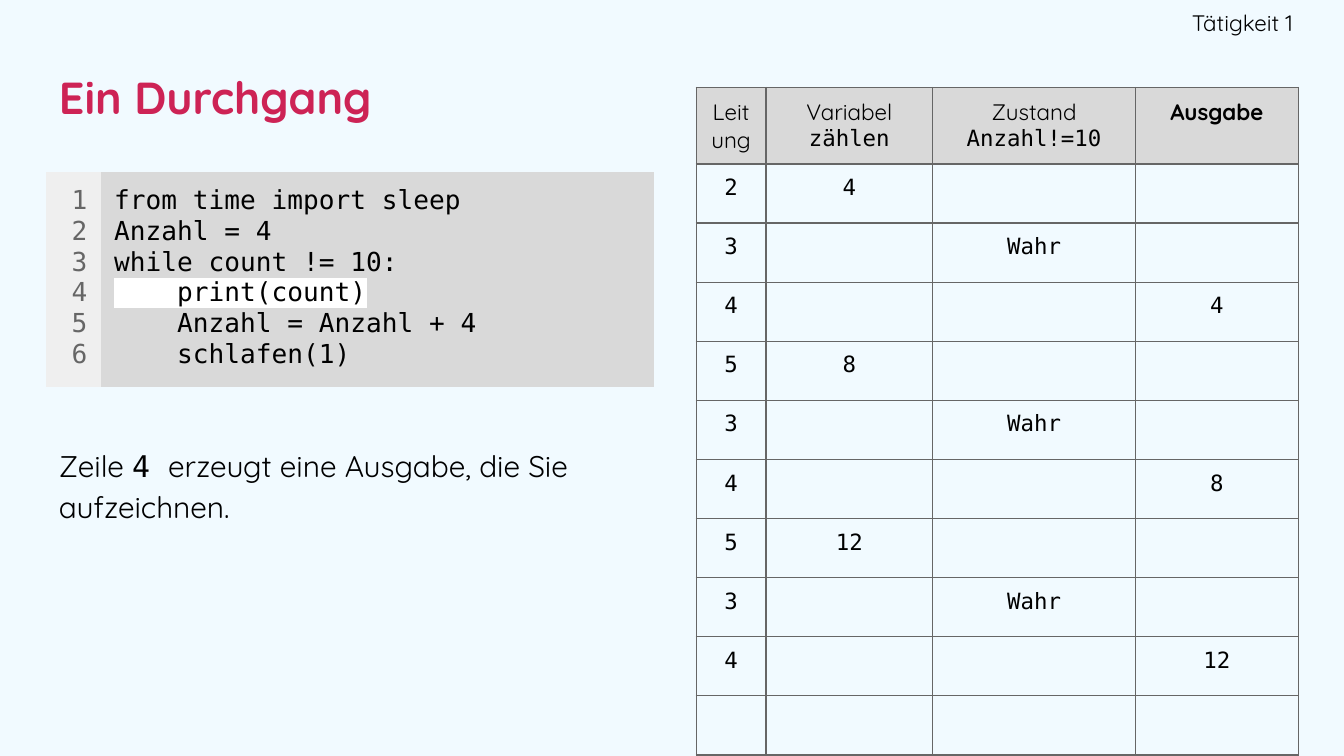
from dataclasses import dataclass
from lxml.etree import SubElement as Sub
from pptx import Presentation
from pptx.dml.color import RGBColor as Rgb
from pptx.enum.text import MSO_ANCHOR as Anchor, PP_ALIGN as Align
from pptx.oxml.ns import qn
from pptx.util import Inches, Pt

HUES = {
    "back": "F1FAFF", "title": "CD2355", "text": "000000", "count": "666666",
    "gutter": "EFEFEF", "code": "D9D9D9", "mark": "FFFFFF", "line": "666666",
}
SANS, MONO = "Quicksand", "DejaVu Sans Mono"
PLAIN = "{2D5ABB26-0587-4C30-8999-92F81FD0307C}"


@dataclass
class Span:
    text: str
    size: int = 12
    font: str = SANS
    hue: str = "text"
    bold: bool = False
    mark: bool = False


@dataclass
class Box:
    left: float
    top: float
    width: float
    height: float
    spans: list[Span]
    anchor: Anchor = Anchor.MIDDLE
    align: Align = Align.LEFT
    right: float = 0.1
    line: float = 1.0
    after: int = 0


def color(key: str) -> Rgb:
    """Return the named colour."""
    return Rgb.from_string(HUES[key])


def tint(parent, tag: str, key: str):
    """Add an element that holds a colour."""
    node = Sub(parent, qn(tag))
    Sub(node, qn("a:srgbClr"), val=HUES[key])
    return node


def write(para, spans: list[Span], align: Align, line: float = 1.0) -> None:
    """Add the spans to a paragraph."""
    para.alignment, para.line_spacing = align, line
    for span in spans:
        run = para.add_run()
        run.text = span.text
        font = run.font
        font.size, font.bold, font.name = Pt(span.size), span.bold, span.font
        font.color.rgb = color(span.hue)
        if span.mark:
            props = run._r.get_or_add_rPr()
            props.find(qn("a:solidFill")).addnext(tint(props, "a:highlight", "mark"))


def draw_box(slide, box: Box) -> None:
    """Draw a text box."""
    sides = (box.left, box.top, box.width, box.height)
    frame = slide.shapes.add_textbox(*map(Inches, sides)).text_frame
    frame.word_wrap = True
    frame.vertical_anchor = box.anchor
    frame.margin_left = frame.margin_top = frame.margin_bottom = Inches(0.1)
    frame.margin_right = Inches(box.right)
    para = frame.paragraphs[0]
    para.space_after = Pt(box.after)
    write(para, box.spans, box.align, box.line)


def draw_grid(slide, left: float, top: float, cols: list[float], rows: list[float]):
    """Draw a bare table."""
    sides = (left, top, sum(cols), sum(rows))
    table = slide.shapes.add_table(len(rows), len(cols), *map(Inches, sides)).table
    table.first_row = table.horz_banding = False
    table._tbl.tblPr.find(qn("a:tableStyleId")).text = PLAIN
    for col, width in zip(table.columns, cols):
        col.width = Inches(width)
    for row, height in zip(table.rows, rows):
        row.height = Inches(height)
    return table


def fill_cell(cell, lines: list[Span], align: Align, pad: float, fill: str = "") -> None:
    """Fill a cell with one paragraph per span."""
    cell.margin_left = cell.margin_right = Inches(pad)
    cell.margin_top = cell.margin_bottom = Inches(pad)
    if fill:
        cell.fill.solid()
        cell.fill.fore_color.rgb = color(fill)
    else:
        cell.fill.background()
    frame = cell.text_frame
    for i, span in enumerate(lines):
        write(frame.add_paragraph() if i else frame.paragraphs[0], [span], align)
    if not lines:
        Sub(frame.paragraphs[0]._p, qn("a:endParaRPr"), sz="1200")


def edge_cell(cell) -> None:
    """Rule all four sides of a cell."""
    props = cell._tc.get_or_add_tcPr()
    for i, side in enumerate("LRTB"):
        line = Sub(props, qn(f"a:ln{side}"), w=str(Pt(0.75)))
        tint(line, "a:solidFill", "line")
        props.insert(i, line)


def draw_code(slide) -> None:
    """Draw the numbered listing."""
    code = ["from time import sleep", "Anzahl = 4", "while count != 10:",
            "    print(count)", "    Anzahl = Anzahl + 4", "    schlafen(1)"]
    table = draw_grid(slide, 0.34, 1.28, [0.41, 4.12], [0.43])
    nums = [Span(str(i), 14, MONO, "count") for i in range(1, len(code) + 1)]
    lines = [Span(text, 14, MONO, mark="print" in text) for text in code]
    fill_cell(table.cell(0, 0), nums, Align.RIGHT, 0.1, "gutter")
    fill_cell(table.cell(0, 1), lines, Align.LEFT, 0.1, "code")


def draw_trace(slide) -> None:
    """Draw the trace table."""
    head = [
        [Span("Leitung")],
        [Span("Variabel"), Span("zählen", font=MONO)],
        [Span("Zustand"), Span("Anzahl!=10", font=MONO)],
        [Span("Ausgabe", bold=True)],
    ]
    steps = [("2", "4", "", ""), ("3", "", "Wahr", ""), ("4", "", "", "4"),
             ("5", "8", "", ""), ("3", "", "Wahr", ""), ("4", "", "", "8"),
             ("5", "12", "", ""), ("3", "", "Wahr", ""), ("4", "", "", "12"),
             ("", "", "", "")]
    body = [[[Span(text, font=MONO)] if text else [] for text in step] for step in steps]
    table = draw_grid(slide, 5.18, 0.65, [0.52, 1.24, 1.51, 1.21],
                      [0.57] + [0.44] * len(steps))
    for r, row in enumerate([head] + body):
        for c, lines in enumerate(row):
            cell = table.cell(r, c)
            fill_cell(cell, lines, Align.CENTER, 0.08, "" if r else "code")
            edge_cell(cell)


def main() -> None:
    """Build and save the slide."""
    deck = Presentation()
    deck.slide_width, deck.slide_height = Inches(10), Inches(10 * 9 / 16)
    slide = deck.slides.add_slide(deck.slide_layouts[6])
    slide.background.fill.solid()
    slide.background.fill.fore_color.rgb = color("back")
    title = [Span("Ein Durchgang", 24, hue="title", bold=True)]
    label = [Span("Tätigkeit 1")]
    note = [Span("Zeile ", 16), Span("4 ", 16, MONO),
            Span("erzeugt eine Ausgabe, die Sie aufzeichnen.", 16)]
    draw_box(slide, Box(0.34, 0.34, 9.32, 0.76, title))
    draw_box(slide, Box(7.48, 0, 2.14, 0.34, label, align=Align.RIGHT, right=0))
    draw_code(slide)
    draw_box(slide, Box(0.34, 3.19, 4.48, 1.58, note, Anchor.TOP, line=1.15, after=16))
    draw_trace(slide)
    deck.save("out.pptx")


if __name__ == "__main__":
    main()
